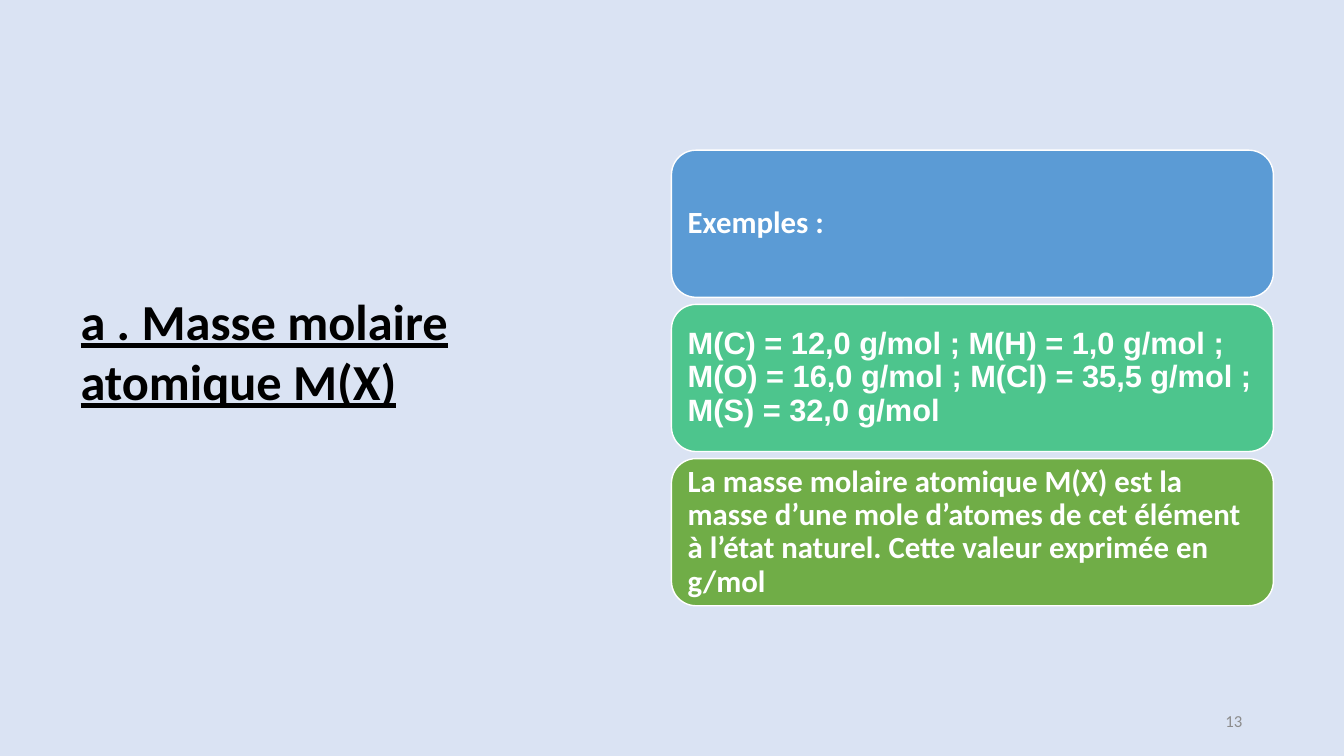
from pptx import Presentation
from pptx.dml.color import RGBColor
from pptx.enum.shapes import MSO_SHAPE as SHAPE
from pptx.enum.text import MSO_ANCHOR as ANCHOR, PP_ALIGN as ALIGN
from pptx.util import Inches, Pt

COLORS = {
    "background": "DAE3F3", "title": "000000", "white": "FFFFFF",
    "blue": "5B9BD5", "teal": "4DC58D", "green": "70AD47", "number": "8C8C8C",
}


def rgb(name):
    return RGBColor.from_string(COLORS[name])


class SlideBuilder:
    def __init__(self, prs):
        self.s = prs.slides.add_slide(prs.slide_layouts[6])
        fill = self.s.background.fill
        fill.solid()
        fill.fore_color.rgb = rgb("background")

    def set_text(self, sp, text, size, color, font="Calibri", bold=False,
                 underline=False, align=ALIGN.LEFT, spacing=1.0):
        """Put one formatted paragraph in the middle of a shape."""
        tf = sp.text_frame
        tf.word_wrap = True
        tf.vertical_anchor = ANCHOR.MIDDLE
        tf.text = text
        p = tf.paragraphs[0]
        p.alignment = align
        p.line_spacing = spacing
        r = p.runs[0]
        r.font.name = font
        r.font.size = Pt(size)
        r.font.bold = bold
        r.font.underline = underline
        r.font.color.rgb = rgb(color)

    def text(self, box, text, size, color, **style):
        sp = self.s.shapes.add_textbox(*map(Inches, box))
        self.set_text(sp, text, size, color, **style)
        return sp

    def card(self, box, text, fill, font):
        sp = self.s.shapes.add_shape(SHAPE.ROUNDED_RECTANGLE, *map(Inches, box))
        sp.shadow.inherit = False
        sp.fill.solid()
        sp.fill.fore_color.rgb = rgb(fill)
        sp.line.color.rgb = rgb("white")
        sp.line.width = Pt(1)
        tf = sp.text_frame
        tf.margin_left = tf.margin_right = Inches(0.09)
        tf.margin_top = tf.margin_bottom = 0
        self.set_text(sp, text, 22, "white", font=font, bold=True, spacing=0.9)


def main():
    prs = Presentation()
    prs.slide_width, prs.slide_height = Inches(13.33), Inches(7.5)
    slide = SlideBuilder(prs)

    title = slide.text((0.7, 0.7, 5.25, 6.09), "a . Masse molaire atomique M(X)",
                       36, "title", bold=True, underline=True)
    title.text_frame.margin_bottom = Inches(0.59)

    cards = [
        ("Exemples :", "blue", "Calibri"),
        ("M(C) = 12,0 g/mol ; M(H) = 1,0 g/mol ; M(O) = 16,0 g/mol ; "
         "M(Cl) = 35,5 g/mol ; M(S) = 32,0 g/mol", "teal", "Arial"),
        ("La masse molaire atomique M(X) est la masse d’une mole d’atomes de "
         "cet élément à l’état naturel. Cette valeur exprimée en g/mol",
         "green", "Calibri"),
    ]
    top, height, gap = 1.49, 1.46, 0.07
    for i, (text, fill, font) in enumerate(cards):
        slide.card((6.66, top + i * (height + gap), 5.97, height), text, fill, font)

    slide.text((9.42, 6.95, 3, 0.4), "13", 12, "number", align=ALIGN.RIGHT)
    prs.save("out.pptx")


if __name__ == "__main__":
    main()
